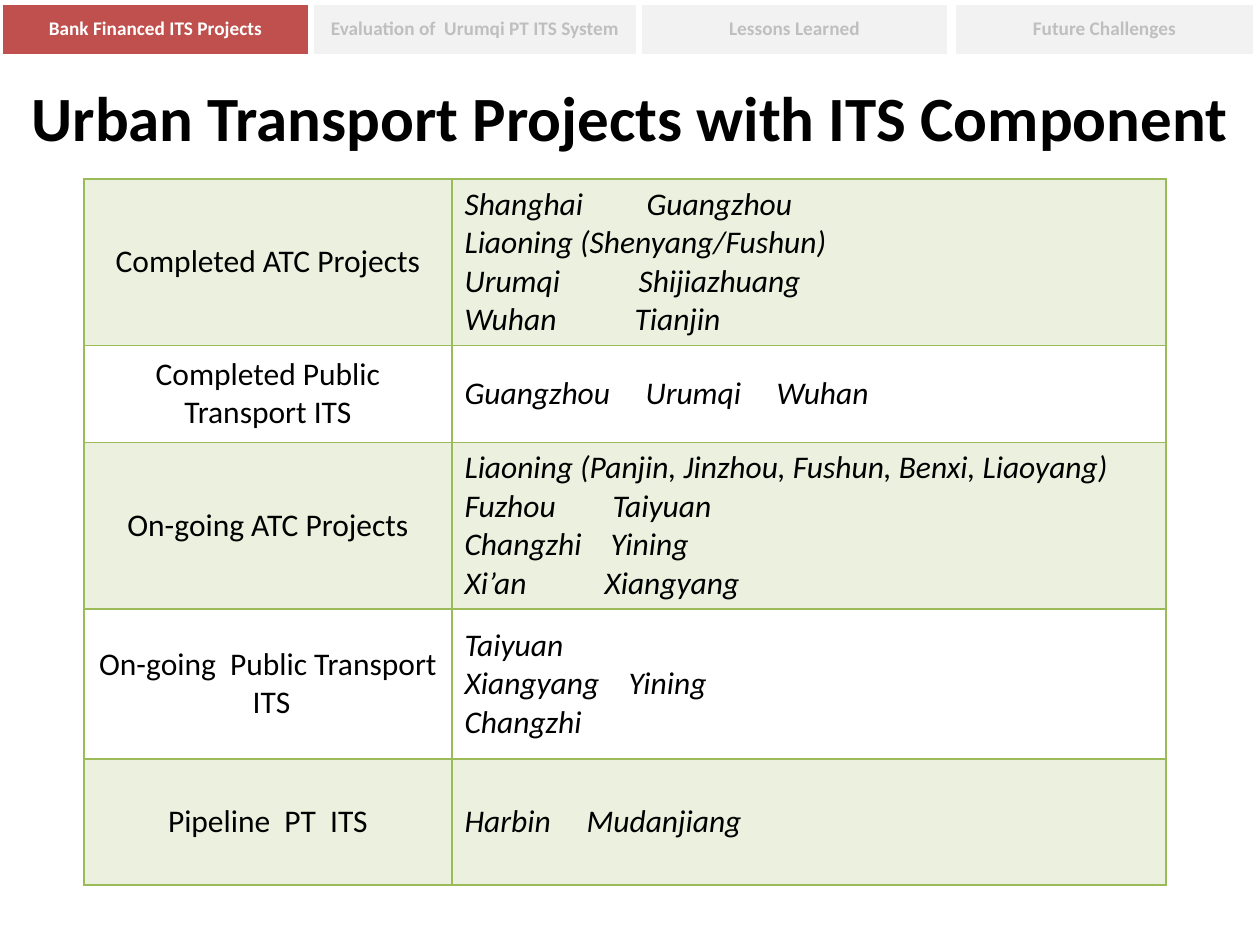
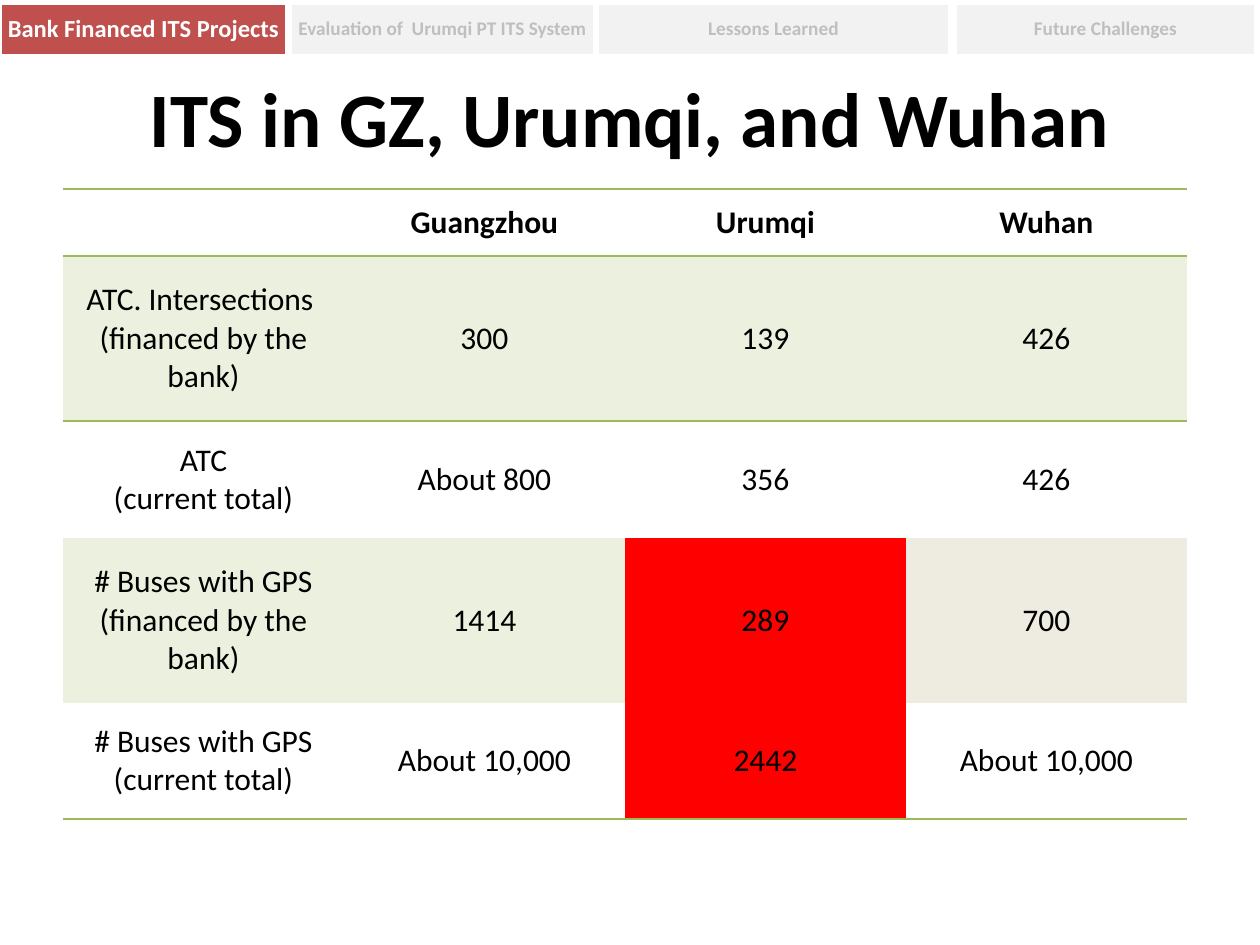
from dataclasses import dataclass

from lxml import etree
from pptx import Presentation
from pptx.dml.color import RGBColor
from pptx.enum.shapes import MSO_SHAPE
from pptx.enum.text import MSO_ANCHOR, MSO_AUTO_SIZE, PP_ALIGN
from pptx.oxml.ns import qn
from pptx.util import Emu, Pt

RECT = MSO_SHAPE.RECTANGLE
MIDDLE = MSO_ANCHOR.MIDDLE
NO_AUTOFIT = MSO_AUTO_SIZE.NONE
LEFT, CENTER = PP_ALIGN.LEFT, PP_ALIGN.CENTER
SCALE = 914400 / 126
PLAIN_STYLE = "{2D5ABB26-0587-4C30-8999-92F81FD0307C}"
TITLE_ONLY = 5


@dataclass(frozen=True)
class Theme:
    font: str = "Calibri"
    ink: str = "000000"
    paper: str = "FFFFFF"
    active: str = "C0504D"
    idle: str = "F2F2F2"
    idle_ink: str = "BFBFBF"
    rule: str = "9BBB59"
    band: str = "EBF1DE"
    alert: str = "FF0000"
    beige: str = "EEECE1"
    long_title_size: int = 36
    title_size: int = 44
    body_size: int = 18
    tab_size: int = 11
    big_tab_size: int = 14


THEME = Theme()
SECTIONS = (
    "Bank Financed ITS Projects",
    "Evaluation of  Urumqi PT ITS System",
    "Lessons Learned",
    "Future Challenges",
)
PROJECTS = (
    ("Completed ATC Projects", (
        ("Shanghai\tGuangzhou", 182),
        ("Liaoning (Shenyang/Fushun)",),
        ("Urumqi\tShijiazhuang", 174),
        ("Wuhan\tTianjin", 170),
    )),
    ("Completed Public Transport ITS", (
        ("Guangzhou\tUrumqi\tWuhan", 181, 312),
    )),
    ("On-going ATC Projects", (
        ("Liaoning (Panjin, Jinzhou, Fushun, Benxi, Liaoyang)",),
        ("Fuzhou\tTaiyuan", 148),
        ("Changzhi\tYining", 146),
        ("Xi’an\tXiangyang", 140),
    )),
    ("On-going  Public Transport  ITS", (
        ("Taiyuan",),
        ("Xiangyang\tYining", 164),
        ("Changzhi",),
    )),
    ("Pipeline  PT  ITS", (("Harbin\tMudanjiang", 122),)),
)
CITY_FIGURES = (
    ("", "Guangzhou", "Urumqi", "Wuhan"),
    ("ATC. Intersections \n(financed by the bank)", "300", "139", "426"),
    ("ATC\n(current total)", "About 800", "356", "426"),
    ("# Buses with GPS\n(financed by the bank)", "1414", "289", "700"),
    ("# Buses with GPS\n(current total)", "About 10,000", "2442", "About 10,000"),
)
CITY_FILLS = {(3, 2): THEME.alert, (4, 2): THEME.alert, (3, 3): THEME.beige}


def px(n):
    return Emu(round(n * SCALE))


def set_attrs(obj, values):
    for name, value in values.items():
        setattr(obj, name, value)


def write(p, text, size, color=THEME.ink, align=CENTER, **formats):
    p.alignment = align
    r = p.add_run()
    r.text = text
    set_attrs(r.font, {"name": THEME.font, "size": Pt(size), **formats})
    r.font.color.rgb = RGBColor.from_string(color)


def set_tabs(p, stops):
    tabs = etree.SubElement(p._p.get_or_add_pPr(), qn("a:tabLst"))
    for stop in stops:
        etree.SubElement(tabs, qn("a:tab"), pos=str(px(stop)), algn="l")


def add_title(slide, box, text, size):
    sp = slide.shapes.title
    set_attrs(sp, dict(zip(("left", "top", "width", "height"), map(px, box))))
    tf = sp.text_frame
    set_attrs(tf, {"word_wrap": True, "vertical_anchor": MIDDLE, "auto_size": NO_AUTOFIT})
    write(tf.paragraphs[0], text, size, bold=True)


def add_nav(slide, box, spans, active_size):
    x, y, height = box
    for i, (label, (offset, width)) in enumerate(zip(SECTIONS, spans)):
        active = i == 0
        sp = slide.shapes.add_shape(RECT, px(x + offset), px(y), px(width), px(height))
        sp.shadow.inherit = False
        sp.fill.solid()
        sp.fill.fore_color.rgb = RGBColor.from_string(THEME.active if active else THEME.idle)
        sp.line.color.rgb = RGBColor.from_string(THEME.paper)
        sp.line.width = Pt(2)
        tf = sp.text_frame
        set_attrs(tf, {"word_wrap": True, "vertical_anchor": MIDDLE})
        set_attrs(tf, {f"margin_{side}": px(6) for side in ("left", "top", "right", "bottom")})
        p = tf.paragraphs[0]
        p.line_spacing = 0.9
        write(p, label, active_size if active else THEME.tab_size,
              THEME.paper if active else THEME.idle_ink, bold=True)


def add_grid(slide, box, widths, heights):
    x, y = box
    frame = slide.shapes.add_table(len(heights), len(widths), px(x), px(y),
                                   px(sum(widths)), px(sum(heights)))
    table = frame.table
    set_attrs(table, {"first_row": False, "horz_banding": False})
    table._tbl.tblPr.find(qn("a:tableStyleId")).text = PLAIN_STYLE
    for col, width in zip(table.columns, widths):
        col.width = px(width)
    for row, height in zip(table.rows, heights):
        row.height = px(height)
    return table


def style_cell(cell, sides, fill):
    cell.vertical_anchor = MIDDLE
    tcPr = cell._tc.get_or_add_tcPr()
    for side in sides:
        ln = etree.SubElement(tcPr, qn(f"a:ln{side}"), w=str(Pt(1)))
        solid = etree.SubElement(ln, qn("a:solidFill"))
        etree.SubElement(solid, qn("a:srgbClr"), val=THEME.rule)
    if fill:
        cell.fill.solid()
        cell.fill.fore_color.rgb = RGBColor.from_string(fill)
    else:
        cell.fill.background()


def fill_cell(cell, lines, **formats):
    tf = cell.text_frame
    for i, (text, *stops) in enumerate(lines):
        p = tf.add_paragraph() if i else tf.paragraphs[0]
        write(p, text, THEME.body_size, **formats)
        if stops:
            set_tabs(p, stops)


def add_projects_table(slide, box):
    table = add_grid(slide, box, (368, 714), (166, 97, 166, 150, 126))
    for r, (group, cities) in enumerate(PROJECTS):
        label, detail = table.rows[r].cells
        for cell in (label, detail):
            style_cell(cell, "LRTB", None if r % 2 else THEME.band)
        fill_cell(label, [(group,)])
        fill_cell(detail, cities, align=LEFT, italic=True)


def add_cities_table(slide, box):
    table = add_grid(slide, box, (281,) * 4, (67, 165, 117, 165, 116))
    rules = {0: "TB", 1: "T", len(CITY_FIGURES) - 1: "B"}
    for r, row in enumerate(CITY_FIGURES):
        for c, text in enumerate(row):
            cell = table.cell(r, c)
            style_cell(cell, rules.get(r, ""),
                       CITY_FILLS.get((r, c), THEME.band if r % 2 else None))
            if text:
                fill_cell(cell, [(line,) for line in text.split("\n")], bold=r == 0)


def build_projects(slide):
    add_title(slide, (0, 38, 1260, 157), "Urban Transport Projects with ITS Component",
              THEME.long_title_size)
    add_projects_table(slide, (84, 179))
    add_nav(slide, (1, 3, 53), ((0, 309), (311, 326), (639, 309), (953, 301)), THEME.tab_size)


def build_cities(slide):
    add_title(slide, (63, 38, 1134, 157), "ITS in GZ, Urumqi, and Wuhan", THEME.title_size)
    add_cities_table(slide, (63, 189))
    add_nav(slide, (0, 3, 53), ((0, 287), (290, 305), (597, 353), (955, 301)),
            THEME.big_tab_size)


def main():
    prs = Presentation()
    set_attrs(prs, {"slide_width": px(1260), "slide_height": px(945)})
    for build in (build_projects, build_cities):
        build(prs.slides.add_slide(prs.slide_layouts[TITLE_ONLY]))
    prs.save("out.pptx")


if __name__ == "__main__":
    main()
